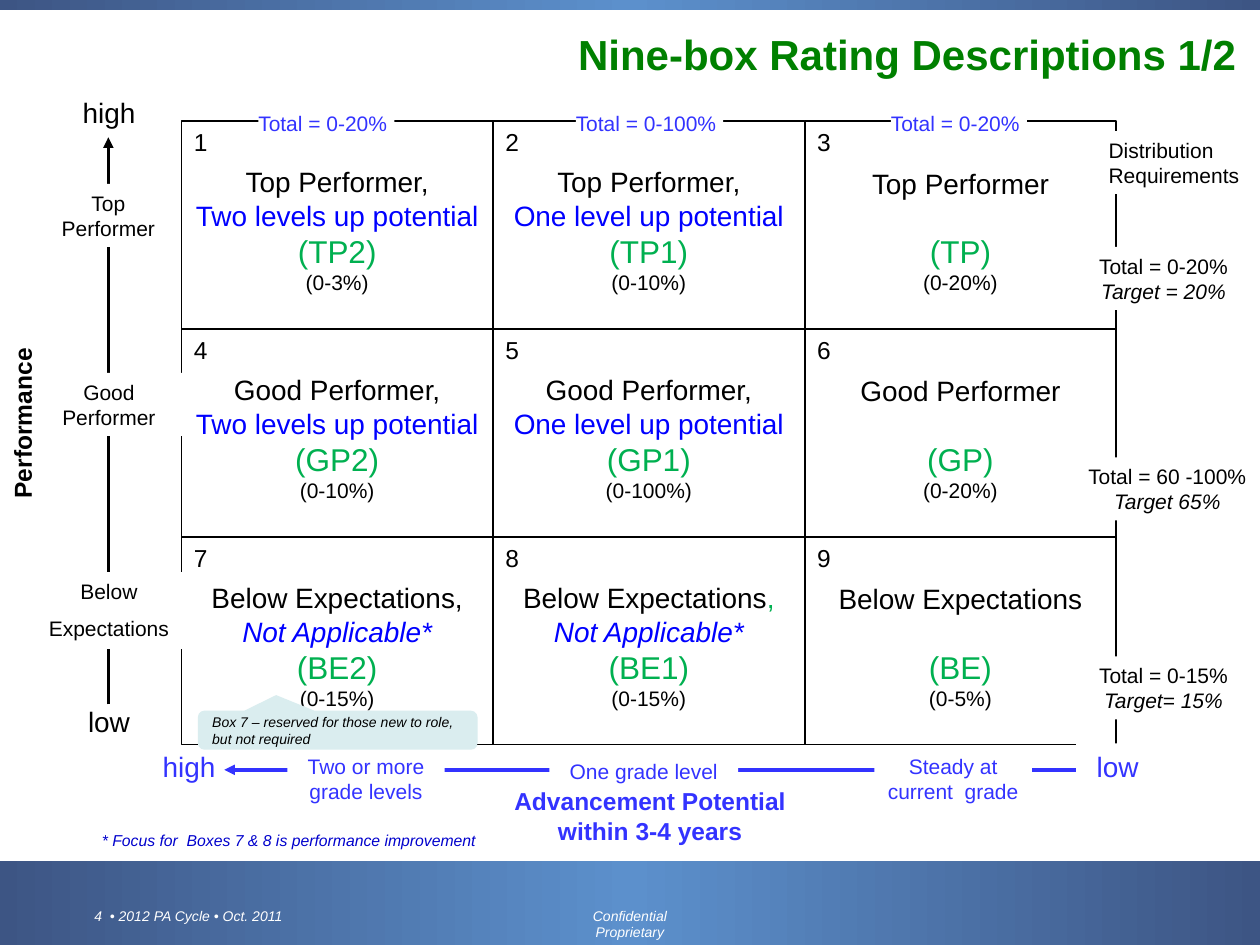
from collections import namedtuple
from copy import deepcopy

from pptx import Presentation
from pptx.dml.color import RGBColor
from pptx.enum.shapes import MSO_CONNECTOR, MSO_SHAPE
from pptx.enum.text import MSO_ANCHOR as Anchor, PP_ALIGN as Align
from pptx.oxml import parse_xml
from pptx.oxml.ns import nsdecls, qn
from pptx.util import Inches, Pt

Box = namedtuple("Box", "left top width height")
Words = namedtuple("Words", "text size color italic bold", defaults=(12, "000000", False, False))

BLACK, WHITE, AXIS_BLUE = "000000", "FFFFFF", "3333FF"
LEVEL_BLUE, CODE_GREEN = "0000FF", "00B050"
TWO_UP, ONE_UP, NOT_APPLICABLE = "Two levels up potential", "One level up potential", "Not Applicable*"
CELLS = [
    [("Top Performer,", TWO_UP, "TP2", "0-3%"),
     ("Top Performer,", ONE_UP, "TP1", "0-10%"),
     ("Top Performer", None, "TP", "0-20%")],
    [("Good Performer,", TWO_UP, "GP2", "0-10%"),
     ("Good Performer,", ONE_UP, "GP1", "0-100%"),
     ("Good Performer", None, "GP", "0-20%")],
    [("Below Expectations,", NOT_APPLICABLE, "BE2", "0-15%"),
     ("Below Expectations,", NOT_APPLICABLE, "BE1", "0-15%"),
     ("Below Expectations", None, "BE", "0-5%")],
]


def rgb(color):
    return RGBColor.from_string(color)


def lengths(box):
    return [Inches(value) for value in box]


def inside(area, left, top, width, height):
    """Turn a place relative to the area into a place on the page."""
    return Box(area.left + left, area.top + top, width, height)


def write(shape, paragraphs, align=Align.CENTER, anchor=Anchor.TOP, wrap=True):
    """Fill a shape with paragraphs, each given as a list of Words."""
    frame = shape.text_frame
    frame.word_wrap, frame.vertical_anchor = wrap, anchor
    for index, words in enumerate(paragraphs):
        para = frame.add_paragraph() if index else frame.paragraphs[0]
        para.alignment = align
        for word in words:
            span = para.add_run()
            span.text = word.text
            font = span.font
            font.name, font.size = "Arial", Pt(word.size)
            font.italic, font.bold = word.italic, word.bold
            font.color.rgb = rgb(word.color)
    return frame


def add_panel(page, box, kind=MSO_SHAPE.RECTANGLE, fill=WHITE, line=None):
    panel = page.shapes.add_shape(kind, *lengths(box))
    panel.shadow.inherit = False
    if fill:
        panel.fill.solid()
        panel.fill.fore_color.rgb = rgb(fill)
    else:
        panel.fill.background()
    if line:
        panel.line.color.rgb = rgb(line)
        panel.line.width = Pt(1)
    else:
        panel.line.fill.background()
    return panel


def add_label(page, box, paragraphs, **options):
    return write(add_panel(page, box), paragraphs, **options)


def add_text(page, box, words, **options):
    return write(page.shapes.add_textbox(*lengths(box)), [[words]], **options)


def add_arrow(page, start, end, color):
    arrow = page.shapes.add_connector(MSO_CONNECTOR.STRAIGHT, *lengths(start + end))
    arrow.line.color.rgb = rgb(color)
    arrow.line.width = Pt(2)
    arrow.line._get_or_add_ln().append(parse_xml(f'<a:tailEnd {nsdecls("a")} type="triangle"/>'))
    arrow._element.spPr.append(parse_xml(f'<a:effectLst {nsdecls("a")}/>'))


def add_band(page, box):
    band = add_panel(page, box)
    band.fill.gradient()
    band.fill.gradient_angle = 0
    stops = band._element.spPr.find(".//" + qn("a:gsLst"))
    stops.insert(1, deepcopy(stops[0]))
    for stop, position, color in zip(band.fill.gradient_stops, (0, 0.5, 1), ("3D5584", "5C90CC", "3D5584")):
        stop.position = position
        stop.color.rgb = rgb(color)


def add_footer(page, area):
    add_band(page, area)
    notes = [("4  • 2012 PA Cycle • Oct. 2011", 0.65, 2.66, Align.LEFT, 0.1),
             ("Confidential Proprietary", 4.32, 1.36, Align.CENTER, 0.3)]
    for text, left, width, align, margin in notes:
        frame = add_text(page, inside(area, left, 0.32, width, 0.23),
                         Words(text, 8, WHITE, italic=True), align=align)
        frame.margin_left = frame.margin_right = Inches(margin)


def add_cell(page, box, number, rating, level, code, share):
    heading = [Words(rating, 16)]
    if number == 8:
        heading = [Words(rating.rstrip(","), 16), Words(",", 16, CODE_GREEN)]
    paragraphs = [heading, [Words(f"({code})", 18, CODE_GREEN)], [Words(f"({share})")]]
    if level:
        paragraphs.insert(1, [Words(level, 16, LEVEL_BLUE, italic=level == NOT_APPLICABLE)])
    frame = write(add_panel(page, box, fill=None, line=BLACK), paragraphs, anchor=Anchor.BOTTOM, wrap=False)
    frame.margin_bottom = Inches(0.27)
    if not level:
        frame.paragraphs[1].space_before = Pt(18.4)
    add_text(page, inside(box, 0, 0, 0.41, 0.31), Words(str(number), 14), align=Align.LEFT)


def add_grid(page, area):
    width, height = area.width / 3, area.height / 3
    for row, cells in enumerate(CELLS):
        for column, cell in enumerate(cells):
            box = inside(area, column * width, row * height, width, height)
            add_cell(page, box, row * 3 + column + 1, *cell)


def add_column_totals(page, area):
    for left, width, share in [(0.61, 1.08, "0-20%"), (3.13, 1.17, "0-100%"), (5.63, 1.08, "0-20%")]:
        frame = add_label(page, inside(area, left, -0.08, width, 0.2),
                          [[Words(f"Total = {share}", 12, AXIS_BLUE)]],
                          align=Align.LEFT, anchor=Anchor.MIDDLE, wrap=False)
        frame.margin_left = frame.margin_right = frame.margin_top = frame.margin_bottom = 0


def add_row_totals(page, area):
    add_label(page, inside(area, 0.17, 0, 1.25, 0.5), [[Words("Distribution")], [Words("Requirements")]],
              align=Align.LEFT, wrap=False)
    totals = [(0.09, 0.92, 1.23, "Total = 0-20%", "Target = 20%"),
              (0, 2.59, 1.47, "Total = 60 -100%", "Target 65%"),
              (0.09, 4.17, 1.23, "Total = 0-15%", "Target= 15%")]
    for left, top, width, total, target in totals:
        add_label(page, inside(area, left, top, width, 0.5),
                  [[Words(total)], [Words(target, italic=True)]], wrap=False)


def add_performance_axis(page, area):
    middle = area.left + 0.86
    add_arrow(page, (middle, area.top + 4.88), (middle, area.top + 0.38), BLACK)
    for text, top in [("high", 0), ("low", 4.83)]:
        add_text(page, inside(area, 0.53, top, 0.67, 0.37), Words(text, 16))
    title = page.shapes.add_textbox(*lengths(inside(area, -0.72, 2.48, 1.8, 0.34)))
    title.rotation = 270
    write(title, [[Words("Performance", 14, bold=True)]])
    ratings = [(0.32, 0.75, 1.08, 0.5, ["Top Performer"]),
               (0.28, 2.25, 1.17, 0.5, ["Good Performer"]),
               (0.28, 3.83, 1.17, 0.61, ["Below", "Expectations"])]
    for *place, texts in ratings:
        frame = add_label(page, inside(area, *place), [[Words(text)] for text in texts])
        for para in frame.paragraphs[1:]:
            para.space_before = Pt(7)


def add_potential_axis(page, area):
    middle = area.top + 0.21
    add_arrow(page, (area.left + 7.67, middle), (area.left + 0.67, middle), AXIS_BLUE)
    add_text(page, inside(area, 0, 0, 0.78, 0.37), Words("high", 16, AXIS_BLUE))
    add_label(page, inside(area, 7.43, 0, 0.66, 0.37), [[Words("low", 16, AXIS_BLUE)]])
    add_text(page, inside(area, 2.67, 0.29, 2.76, 0.57),
             Words("Advancement Potential within 3-4 years", 14, AXIS_BLUE, bold=True))
    steps = [(1.17, 0.03, 1.25, 0.5, "Two or more grade levels"),
             (3.25, 0.07, 1.5, 0.3, "One grade level"),
             (5.83, 0.03, 1.25, 0.5, "Steady at current  grade")]
    for *place, text in steps:
        add_label(page, inside(area, *place), [[Words(text, 12, AXIS_BLUE)]], anchor=Anchor.MIDDLE)


def add_callout(page, box):
    callout = add_panel(page, box, MSO_SHAPE.ROUNDED_RECTANGULAR_CALLOUT, "DAEDEF")
    for index, value in enumerate((-0.22, -0.9, 0.17)):
        callout.adjustments[index] = value
    write(callout, [[Words("Box 7 – reserved for those new to role, but not required", 8, italic=True)]],
          align=Align.LEFT, anchor=Anchor.MIDDLE)


def main():
    deck = Presentation()
    deck.slide_width, deck.slide_height = Inches(10), Inches(7.5)
    page = deck.slides.add_slide(deck.slide_layouts[6])
    grid = Box(1.44, 0.96, 7.42, 4.95)

    add_footer(page, Box(0, 6.83, 10, 0.67))
    add_band(page, Box(0, 0, 10, 0.08))
    title = add_text(page, Box(0.08, 0.08, 9.83, 0.75),
                     Words("Nine-box Rating Descriptions 1/2", 24, "008000", bold=True),
                     align=Align.RIGHT, anchor=Anchor.MIDDLE)
    title.paragraphs[0].line_spacing = 0.85
    add_grid(page, grid)
    add_performance_axis(page, Box(0, 0.71, 1.45, 5.2))
    add_column_totals(page, grid)
    add_row_totals(page, Box(8.53, 1.04, 1.47, 4.67))
    add_potential_axis(page, Box(1.11, 5.9, 8.09, 0.86))
    add_text(page, Box(0.71, 6.54, 3.2, 0.25),
             Words("* Focus for  Boxes 7 & 8 is performance improvement", 9, "0000CC", italic=True),
             align=Align.LEFT, wrap=False)
    add_callout(page, Box(1.57, 5.64, 2.22, 0.31))
    deck.save("out.pptx")


if __name__ == "__main__":
    main()
